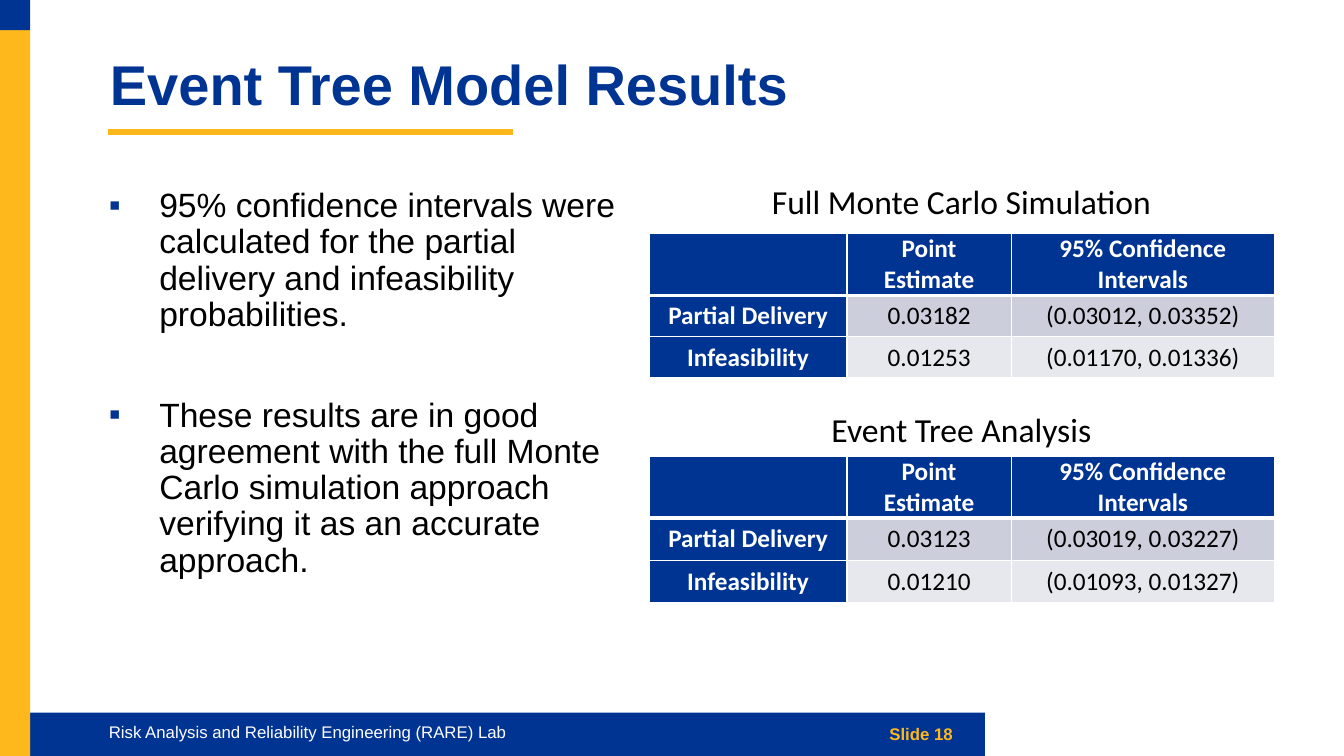
from dataclasses import dataclass

from lxml import etree
from pptx import Presentation
from pptx import util as u
from pptx.dml.color import RGBColor
from pptx.enum import shapes, text
from pptx.oxml import ns

EMU_PER_PX = 9144  # 100 px to the inch

BLUE = RGBColor(0x00, 0x34, 0x93)
GOLD = RGBColor(0xFF, 0xB8, 0x1C)
WHITE = RGBColor(0xFF, 0xFF, 0xFF)
BLACK = RGBColor(0x00, 0x00, 0x00)
ROW_FILLS = (RGBColor(0xCC, 0xCE, 0xDC), RGBColor(0xE7, 0xE8, 0xEE))

LEFT, CENTER, RIGHT = text.PP_ALIGN.LEFT, text.PP_ALIGN.CENTER, text.PP_ALIGN.RIGHT
TOP, MIDDLE = text.MSO_ANCHOR.TOP, text.MSO_ANCHOR.MIDDLE

HEADER = ("", "Point Estimate", "95% Confidence Intervals")
COLUMN_WIDTHS = (196, 163, 261)
HEADER_HEIGHT = 60
BULLET_INDENT = 50


@dataclass(frozen=True)
class Box:
    left: int
    top: int
    width: int
    height: int

    def emu(self) -> tuple[int, ...]:
        return tuple(px(n) for n in (self.left, self.top, self.width, self.height))


@dataclass(frozen=True)
class Style:
    size: int
    color: RGBColor
    name: str = "Arial"
    bold: bool = False
    align: text.PP_ALIGN = LEFT
    anchor: text.MSO_ANCHOR = TOP
    side_inset: int = 0
    end_inset: int = 5
    line_spacing: float = 1.0


@dataclass(frozen=True)
class Label:
    box: Box
    words: str
    style: Style


@dataclass(frozen=True)
class ResultTable:
    box: Box
    row_height: int
    rows: tuple[tuple[str, str, str], ...]


BANDS = (
    (Box(30, 707, 947, 43), BLUE),
    (Box(0, 30, 30, 720), GOLD),
    (Box(0, 0, 30, 30), BLUE),
)
TITLE = Label(Box(109, 52, 1176, 78), "Event Tree Model Results",
              Style(40, BLUE, bold=True, line_spacing=0.9))
BODY_BOX = Box(108, 182, 523, 416)
BODY_STYLE = Style(24, BLACK, line_spacing=0.9)
BULLETS = (
    "95% confidence intervals were calculated for the partial delivery "
    "and infeasibility probabilities.",
    "These results are in good agreement with the full Monte Carlo simulation "
    "approach verifying it as an accurate approach.",
)
CAPTION = Style(24, BLACK, "Calibri", align=CENTER, side_inset=10)
LABELS = (
    Label(Box(108, 707, 869, 41), "Risk Analysis and Reliability Engineering (RARE) Lab",
          Style(12, WHITE, anchor=MIDDLE, end_inset=0, line_spacing=0.9)),
    Label(Box(655, 708, 300, 40), "Slide 18",
          Style(12, GOLD, bold=True, align=RIGHT, anchor=MIDDLE, side_inset=10)),
    Label(Box(734, 175, 439, 50), "Full Monte Carlo Simulation", CAPTION),
    Label(Box(734, 401, 439, 50), "Event Tree Analysis", CAPTION),
)
TABLES = (
    ResultTable(Box(644, 232, 620, 142), 41, (
        ("Partial Delivery", "0.03182", "(0.03012, 0.03352)"),
        ("Infeasibility", "0.01253", "(0.01170, 0.01336)"))),
    ResultTable(Box(644, 453, 620, 144), 42, (
        ("Partial Delivery", "0.03123", "(0.03019, 0.03227)"),
        ("Infeasibility", "0.01210", "(0.01093, 0.01327)"))),
)


def px(length: int) -> int:
    return length * EMU_PER_PX


def apply(target, values: dict) -> None:
    for name, value in values.items():
        setattr(target, name, value)


def format_paragraph(paragraph, style: Style) -> None:
    apply(paragraph, {"alignment": style.align, "line_spacing": style.line_spacing,
                      "space_before": u.Pt(0)})
    apply(paragraph.font, {"name": style.name, "size": u.Pt(style.size), "bold": style.bold})
    paragraph.font.color.rgb = style.color


def format_frame(frame, style: Style) -> None:
    apply(frame, {
        "word_wrap": True, "auto_size": text.MSO_AUTO_SIZE.NONE,
        "vertical_anchor": style.anchor,
        "margin_left": px(style.side_inset), "margin_right": px(style.side_inset),
        "margin_top": px(style.end_inset), "margin_bottom": px(style.end_inset)})


def place(shape, box: Box) -> None:
    apply(shape, dict(zip(("left", "top", "width", "height"), box.emu())))


def fill_label(shape, label: Label) -> None:
    place(shape, label.box)
    format_frame(shape.text_frame, label.style)
    shape.text_frame.text = label.words
    format_paragraph(shape.text_frame.paragraphs[0], label.style)


def add_band(slide, box: Box, color: RGBColor) -> None:
    shape = slide.shapes.add_shape(shapes.MSO_SHAPE.RECTANGLE, *box.emu())
    shape.shadow.inherit = False
    shape.fill.solid()
    shape.fill.fore_color.rgb = color
    shape.line.fill.background()


def add_title_rule(slide) -> None:
    rule = slide.shapes.add_connector(
        shapes.MSO_CONNECTOR.STRAIGHT, px(107), px(131), px(509), px(131))
    rule.line.color.rgb = GOLD
    rule.line.width = u.Pt(4)
    etree.SubElement(rule._element.spPr, ns.qn("a:effectLst"))


def add_bullet(paragraph) -> None:
    properties = paragraph._p.get_or_add_pPr()
    properties.set("marL", str(px(BULLET_INDENT)))
    properties.set("indent", str(-px(BULLET_INDENT)))
    color = etree.SubElement(properties, ns.qn("a:buClr"))
    etree.SubElement(color, ns.qn("a:srgbClr"), val=str(BLUE))
    etree.SubElement(properties, ns.qn("a:buFont"), typeface="Arial")
    etree.SubElement(properties, ns.qn("a:buChar"), char="▪")


def fill_body(shape) -> None:
    place(shape, BODY_BOX)
    frame = shape.text_frame
    format_frame(frame, BODY_STYLE)
    frame.text = "\n".join(BULLETS)
    for index, paragraph in enumerate(frame.paragraphs):
        add_bullet(paragraph)
        format_paragraph(paragraph, BODY_STYLE)
        paragraph.space_before = u.Pt(46 if index else 0)


def add_borders(cell, widths: dict[str, int]) -> None:
    properties = cell._tc.get_or_add_tcPr()
    for side, points in widths.items():
        line = etree.SubElement(properties, ns.qn(f"a:ln{side}"), w=str(u.Pt(points)))
        fill = etree.SubElement(line, ns.qn("a:solidFill"))
        etree.SubElement(fill, ns.qn("a:srgbClr"), val=str(WHITE))


def add_result_table(slide, result: ResultTable) -> None:
    rows = (HEADER, *result.rows)
    table = slide.shapes.add_table(len(rows), len(HEADER), *result.box.emu()).table
    for column, width in zip(table.columns, COLUMN_WIDTHS):
        column.width = px(width)
    for r, words in enumerate(rows):
        table.rows[r].height = px(result.row_height if r else HEADER_HEIGHT)
        for c, word in enumerate(words):
            cell = table.cell(r, c)
            heading = r == 0 or c == 0
            # The rule below the header is thicker than the others
            add_borders(cell, {"L": 1, "R": 1, "T": 3 if r == 1 else 1, "B": 1 if r else 3})
            cell.fill.solid()
            cell.fill.fore_color.rgb = BLUE if heading else ROW_FILLS[r - 1]
            apply(cell, {"text": word, "vertical_anchor": MIDDLE,
                         "margin_left": px(7), "margin_right": px(7),
                         "margin_top": 0, "margin_bottom": 0})
            format_paragraph(cell.text_frame.paragraphs[0], Style(
                18, WHITE if heading else BLACK, "Calibri", heading, CENTER))


def main() -> None:
    presentation = Presentation()
    apply(presentation, {"slide_width": px(1333), "slide_height": px(750)})
    slide = presentation.slides.add_slide(presentation.slide_layouts[1])

    # Frame of the slide
    for box, color in BANDS:
        add_band(slide, box, color)
    add_title_rule(slide)

    # Title and list
    fill_label(slide.shapes.title, TITLE)
    fill_body(slide.placeholders[1])

    # Tables, captions and footer
    for result in TABLES:
        add_result_table(slide, result)
    for label in LABELS:
        fill_label(slide.shapes.add_textbox(*label.box.emu()), label)

    presentation.save("out.pptx")


if __name__ == "__main__":
    main()
